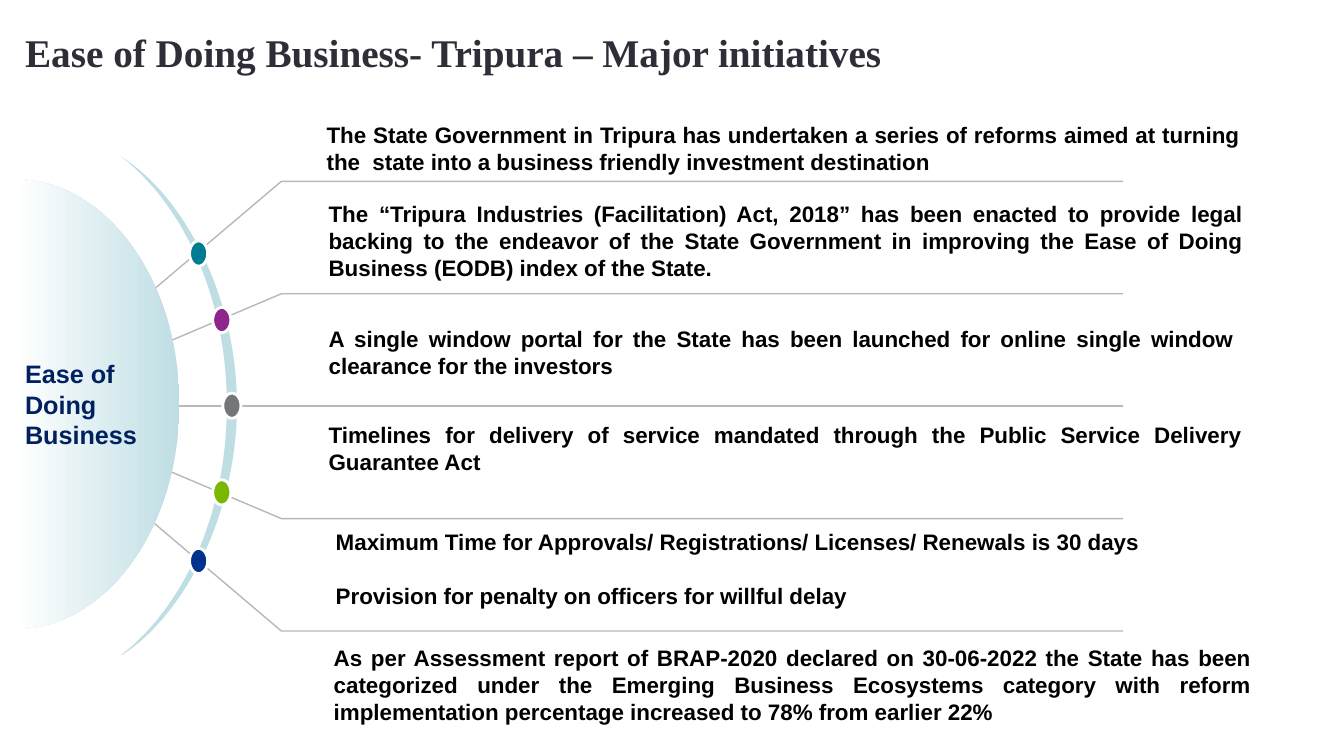
"""Build the Ease of Doing Business slide for Tripura."""
from dataclasses import dataclass

from lxml import etree
from pptx import Presentation
from pptx.dml.color import RGBColor
from pptx.enum.shapes import MSO_SHAPE as Preset
from pptx.enum.text import MSO_ANCHOR as Anchor, PP_ALIGN as Align
from pptx.oxml.ns import qn
from pptx.shapes.autoshape import Shape
from pptx.slide import Slide
from pptx.util import Inches, Pt

Point = tuple[float, float]

PALE_TEAL = "BFDEE4"
WHITE = "FFFFFF"
GUIDE_GREY = "B8B8B8"
HUB = (0.16, 4.03)
GUIDE_GAP = 1.115
BEND_X, GUIDE_RIGHT = 2.79, 11.14
DOT_WIDTH, DOT_HEIGHT = 0.18, 0.25

DOME = [
    (0.15, 1.78),
    (0.15, 6.24), (0.15, 6.24), (0.15, 6.24),
    (1.05, 6.24), (1.78, 5.24), (1.78, 4.01),
    (1.78, 2.78), (1.05, 1.78), (0.15, 1.78),
]
CRESCENT = [
    (1.21, 6.5),
    (1.85, 6.08), (2.35, 5.08), (2.35, 4.02),
    (2.35, 2.97), (1.85, 1.97), (1.21, 1.56),
    (1.83, 2.05), (2.25, 2.97), (2.25, 4.02),
    (2.25, 5.09), (1.83, 6.01), (1.2, 6.5),
]


@dataclass
class Dot:
    left: float
    top: float
    colour: str


@dataclass
class Initiative:
    left: float
    top: float
    width: float
    height: float
    indent: float
    text: str
    bottom_inset: float = 0.04
    right_inset: float = 0


DOTS = [
    Dot(1.88, 2.39, "007C92"),
    Dot(2.11, 3.05, "8E258D"),
    Dot(2.21, 3.9, "747678"),
    Dot(2.11, 4.76, "7AB800"),
    Dot(1.88, 5.44, "00338D"),
]

INITIATIVES = [
    Initiative(2.93, 1.11, 9.37, 0.67, 0.31,
               "The State Government in Tripura has undertaken a series of reforms aimed at "
               "turning the  state into a business friendly investment destination"),
    Initiative(3.13, 1.95, 9.2, 0.88, 0.13,
               "The “Tripura Industries (Facilitation) Act, 2018” has been enacted to provide "
               "legal backing to the endeavor of the State Government in improving the Ease of "
               "Doing Business (EODB) index of the State."),
    Initiative(2.97, 3.14, 9.37, 0.67, 0.29,
               "A single window portal for the State has been launched for online single window "
               "clearance for the investors", 0.05, 0.1),
    Initiative(2.95, 4.14, 9.37, 0.88, 0.31,
               "Timelines for delivery of service mandated through the Public Service Delivery "
               "Guarantee Act", 0.31),
    Initiative(3.02, 5.2, 9.22, 1.15, 0.31,
               "Maximum Time for Approvals/ Registrations/ Licenses/ Renewals is 30 days\n"
               "Provision for penalty on officers for willful delay", 0.31),
    Initiative(3, 6.35, 9.41, 0.88, 0.31,
               "As per Assessment report of BRAP-2020 declared on 30-06-2022 the State has been "
               "categorized under the Emerging Business Ecosystems category with reform "
               "implementation percentage increased to 78% from earlier 22%"),
]


def colour(value: str) -> RGBColor:
    return RGBColor.from_string(value)


def draw_outline(slide: Slide, points: list[Point], close: bool) -> Shape:
    vertices = [(Inches(x), Inches(y)) for x, y in points]
    builder = slide.shapes.build_freeform(*vertices[0])
    builder.add_line_segments(vertices[1:], close=close)
    shape = builder.convert_to_shape()
    shape.shadow.inherit = False
    return shape


def draw_curves(slide: Slide, points: list[Point]) -> Shape:
    shape = draw_outline(slide, points, close=True)
    segments = list(shape.element.iter(qn("a:lnTo")))[:len(points) - 1]
    for start in range(0, len(segments), 3):
        curve = etree.Element(qn("a:cubicBezTo"))
        segments[start].addprevious(curve)
        for segment in segments[start:start + 3]:
            curve.append(segment[0])
            segment.getparent().remove(segment)
    shape.line.fill.background()
    return shape


def format_text(shape: Shape, font: str, size: float, text_colour: str, align: Align) -> None:
    for paragraph in shape.text_frame.paragraphs:
        paragraph.alignment = align
        for run in paragraph.runs:
            run.font.name = font
            run.font.size = Pt(size)
            run.font.bold = True
            run.font.color.rgb = colour(text_colour)


def draw_text_box(slide: Slide, left: float, top: float, width: float, height: float,
                  text: str, anchor: Anchor) -> Shape:
    box = slide.shapes.add_textbox(Inches(left), Inches(top), Inches(width), Inches(height))
    frame = box.text_frame
    frame.word_wrap = True
    frame.vertical_anchor = anchor
    frame.margin_left = frame.margin_right = frame.margin_top = frame.margin_bottom = 0
    frame.text = text
    return box


def draw_guide(slide: Slide, index: int) -> None:
    y = HUB[1] + (index - len(DOTS) // 2) * GUIDE_GAP
    guide = draw_outline(slide, [(GUIDE_RIGHT, y), (BEND_X, y), HUB], close=False)
    guide.fill.background()
    guide.line.color.rgb = colour(GUIDE_GREY)
    guide.line.width = Pt(1)


def draw_dome(slide: Slide) -> None:
    dome = draw_curves(slide, DOME)
    dome.fill.gradient()
    dome.fill.gradient_angle = 180
    for stop, position, value in zip(dome.fill.gradient_stops, (0, 1), (PALE_TEAL, WHITE)):
        stop.position = position
        stop.color.rgb = colour(value)
    dome.text_frame.word_wrap = True
    dome.text_frame.vertical_anchor = Anchor.MIDDLE
    dome.text_frame.text = "Ease of Doing Business"
    format_text(dome, "Arial", 18, "002060", Align.LEFT)


def draw_crescent(slide: Slide) -> None:
    crescent = draw_curves(slide, CRESCENT)
    crescent.fill.solid()
    crescent.fill.fore_color.rgb = colour(PALE_TEAL)


def draw_dot(slide: Slide, dot: Dot) -> None:
    shape = slide.shapes.add_shape(Preset.OVAL, Inches(dot.left), Inches(dot.top),
                                   Inches(DOT_WIDTH), Inches(DOT_HEIGHT))
    shape.shadow.inherit = False
    shape.fill.solid()
    shape.fill.fore_color.rgb = colour(dot.colour)
    shape.line.color.rgb = colour(WHITE)
    shape.line.width = Pt(2)


def draw_initiative(slide: Slide, item: Initiative) -> None:
    box = draw_text_box(slide, item.left, item.top, item.width, item.height,
                        item.text, Anchor.BOTTOM)
    box.text_frame.margin_left = Inches(item.indent)
    box.text_frame.margin_right = Inches(item.right_inset)
    box.text_frame.margin_bottom = Inches(item.bottom_inset)
    format_text(box, "Arial", 16, "000000", Align.JUSTIFY)
    for paragraph in box.text_frame.paragraphs[1:]:
        paragraph.space_before = Pt(19.5)


def draw_title(slide: Slide) -> None:
    title = draw_text_box(slide, 0.25, 0.24, 9.53, 0.63,
                          "Ease of Doing Business- Tripura – Major initiatives", Anchor.MIDDLE)
    format_text(title, "Times New Roman", 28, "2E2E38", Align.LEFT)
    title.text_frame.paragraphs[0].line_spacing = 0.85


def main() -> None:
    presentation = Presentation()
    presentation.slide_width, presentation.slide_height = Inches(13.33), Inches(7.5)
    slide = presentation.slides.add_slide(presentation.slide_layouts[6])
    for index in range(len(DOTS)):
        draw_guide(slide, index)
    draw_dome(slide)
    draw_crescent(slide)
    for dot in DOTS:
        draw_dot(slide, dot)
    for item in INITIATIVES:
        draw_initiative(slide, item)
    draw_title(slide)
    presentation.save("out.pptx")


if __name__ == "__main__":
    main()
